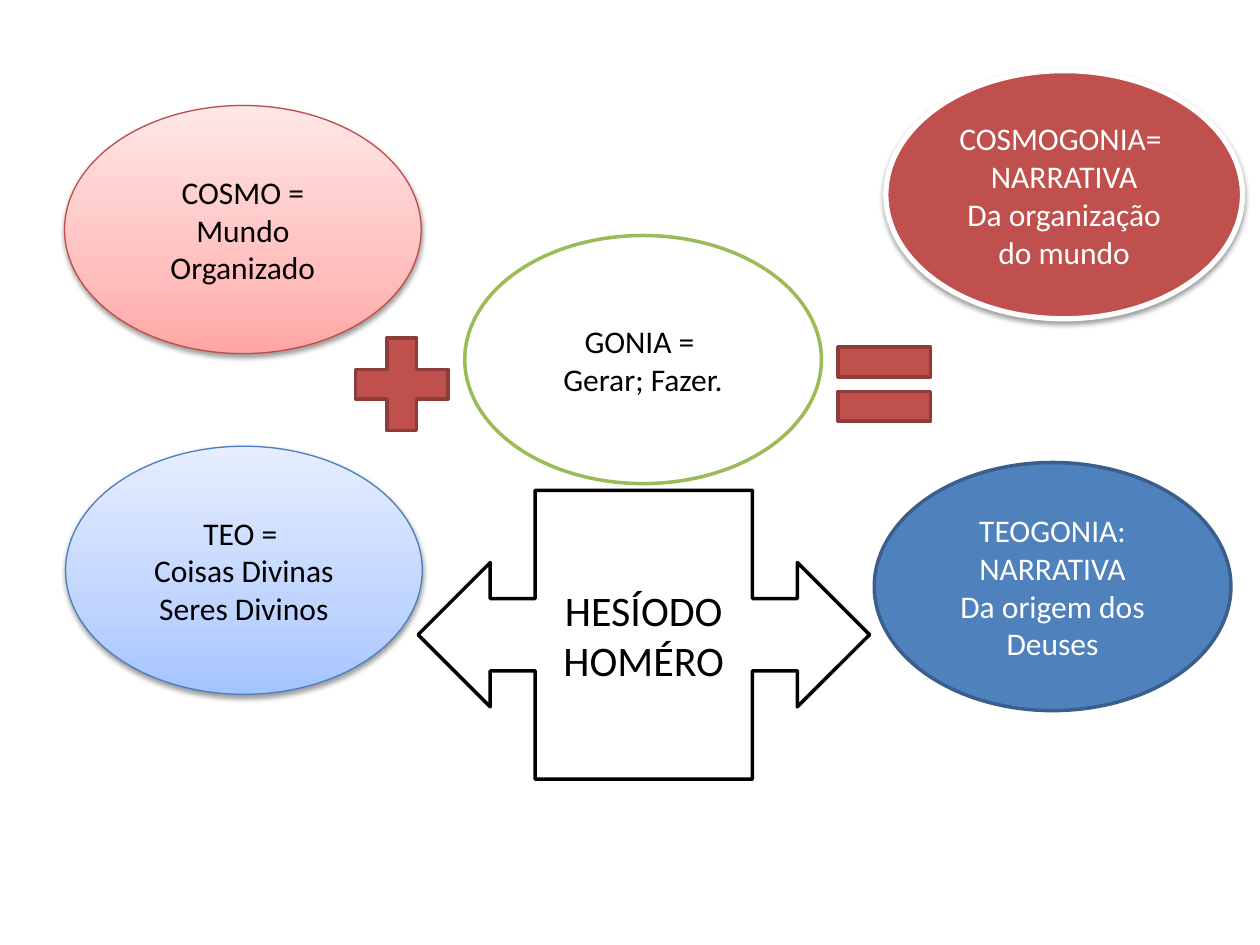
from dataclasses import dataclass

from lxml import etree
from pptx import Presentation
from pptx.dml.color import RGBColor
from pptx.enum.shapes import MSO_SHAPE
from pptx.enum.text import MSO_ANCHOR, PP_ALIGN
from pptx.oxml.ns import qn
from pptx.util import Pt

ELLIPSE = MSO_SHAPE.OVAL
PLUS = MSO_SHAPE.MATH_PLUS
EQUAL = MSO_SHAPE.MATH_EQUAL
ARROW_CALLOUT = MSO_SHAPE.LEFT_RIGHT_ARROW_CALLOUT
MIDDLE = MSO_ANCHOR.MIDDLE
CENTER = PP_ALIGN.CENTER


@dataclass(frozen=True)
class Theme:
    font: str = "Calibri"
    body: int = 18
    large: int = 24
    black: str = "000000"
    white: str = "FFFFFF"
    red: str = "C0504D"
    red_line: str = "BF4C48"
    dark_red: str = "8E3B39"
    blue: str = "4F81BD"
    blue_line: str = "4B7EBC"
    dark_blue: str = "3A5F8C"
    green: str = "9BBB59"
    red_fade: tuple = ((0, "FFA6A5"), (35, "FFC0BF"), (100, "FFE7E7"))
    blue_fade: tuple = ((0, "A4C4FF"), (35, "BFD4FF"), (100, "E6EEFF"))


THEME = Theme()
CONCEPT_SIZE = (203.8, 141.8)
SIGN_SIZE = (72, 72)


def set_gradient(shape, stops):
    """Fill the shape from bottom to top with (percent, colour) stops."""
    shape.fill.gradient()
    shape.fill.gradient_angle = 90
    stop_list = shape._element.spPr.find(qn("a:gradFill")).find(qn("a:gsLst"))
    for old_stop in list(stop_list):
        stop_list.remove(old_stop)
    for percent, color in stops:
        stop = etree.SubElement(stop_list, qn("a:gs"), pos=str(percent * 1000))
        etree.SubElement(stop, qn("a:srgbClr"), val=color)


def add_shadow(shape):
    effects = shape._element.spPr.find(qn("a:effectLst"))
    shadow = etree.SubElement(
        effects, qn("a:outerShdw"), blurRad=str(Pt(3.1)), dist=str(Pt(1.6)),
        dir="5400000", rotWithShape="0")
    color = etree.SubElement(shadow, qn("a:srgbClr"), val=THEME.black)
    etree.SubElement(color, qn("a:alpha"), val="38000")


def write_text(shape, lines, size=THEME.body, color=THEME.black):
    frame = shape.text_frame
    frame.word_wrap = True
    frame.vertical_anchor = MIDDLE
    for number, line in enumerate(lines):
        para = frame.paragraphs[0] if number == 0 else frame.add_paragraph()
        para.alignment = CENTER
        span = para.add_run()
        span.text = line
        span.font.name = THEME.font
        span.font.size = Pt(size)
        span.font.color.rgb = RGBColor.from_string(color)


def add_figure(page, kind, position, size, fill, line, width=2, shadow=False):
    """Add a preset shape; fill is one colour or a tuple of gradient stops."""
    shape = page.shapes.add_shape(kind, *map(Pt, position + size))
    shape.shadow.inherit = False
    if isinstance(fill, tuple):
        set_gradient(shape, fill)
    else:
        shape.fill.solid()
        shape.fill.fore_color.rgb = RGBColor.from_string(fill)
    shape.line.color.rgb = RGBColor.from_string(line)
    shape.line.width = Pt(width)
    if shadow:
        add_shadow(shape)
    return shape


def add_concept(page, position, lines, fill, line, color=THEME.black, **style):
    shape = add_figure(page, ELLIPSE, position, CONCEPT_SIZE, fill, line, **style)
    write_text(shape, lines, color=color)


def add_sign(page, kind, position):
    add_figure(page, kind, position, SIGN_SIZE, THEME.red, THEME.dark_red)


def main():
    deck = Presentation()
    deck.slide_width, deck.slide_height = Pt(720), Pt(540)
    page = deck.slides.add_slide(deck.slide_layouts[6])

    # Word roots on the left
    add_concept(page, (36.9, 60.3), ["COSMO =", "Mundo Organizado"],
                THEME.red_fade, THEME.red_line, width=0.75, shadow=True)
    add_concept(page, (37.5, 255), ["TEO = ", "Coisas Divinas", "Seres Divinos"],
                THEME.blue_fade, THEME.blue_line, width=0.75, shadow=True)

    # Shared ending in the middle
    add_sign(page, PLUS, (193.7, 183.6))
    add_concept(page, (265.6, 134.6), ["GONIA = ", "Gerar; Fazer."],
                THEME.white, THEME.green)

    # Resulting words on the right
    add_concept(page, (506.2, 40.4),
                ["COSMOGONIA= ", "NARRATIVA", "Da organização do mundo"],
                THEME.red, THEME.white, color=THEME.white, width=3, shadow=True)
    add_concept(page, (499.6, 264.3),
                ["TEOGONIA:", "NARRATIVA", "Da origem dos Deuses"],
                THEME.blue, THEME.dark_blue, color=THEME.white)
    add_sign(page, EQUAL, (469.4, 183.6))

    # Authors
    authors = add_figure(page, ARROW_CALLOUT, (238.9, 280.2), (258, 165),
                         THEME.white, THEME.black)
    write_text(authors, ["HESÍODO", "HOMÉRO"], size=THEME.large)

    deck.save("out.pptx")


if __name__ == "__main__":
    main()
